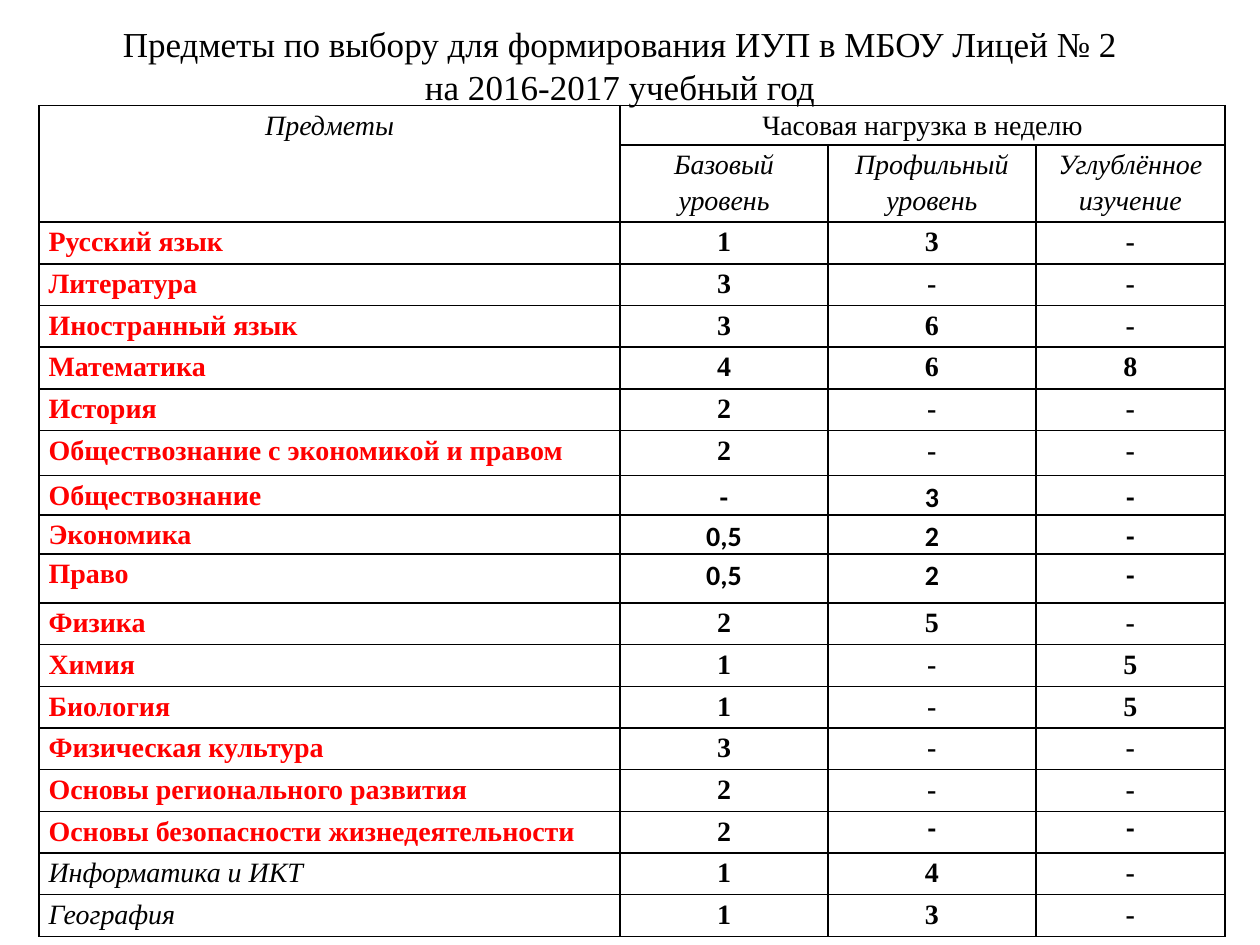
import pptx
import pptx.util
import pptx.dml.color
import pptx.enum.text
import pptx.oxml
import pptx.oxml.ns

Cm = pptx.util.Cm
Pt = pptx.util.Pt
ALIGN = pptx.enum.text.PP_ALIGN
ANCHOR = pptx.enum.text.MSO_ANCHOR
BLACK = pptx.dml.color.RGBColor(0x00, 0x00, 0x00)
RED = pptx.dml.color.RGBColor(0xFF, 0x00, 0x00)
SERIF = "Times New Roman"
SANS = "Calibri"

TITLE = ["Предметы по выбору для формирования ИУП в МБОУ Лицей № 2",
         "на 2016-2017 учебный год"]
LEVELS = ["Базовый уровень", "Профильный уровень", "Углублённое изучение"]
HOURS = [
    ("Русский язык", "1", "3", "-"),
    ("Литература", "3", "-", "-"),
    ("Иностранный язык", "3", "6", "-"),
    ("Математика", "4", "6", "8"),
    ("История", "2", "-", "-"),
    ("Обществознание с экономикой и правом", "2", "-", "-"),
    ("Обществознание", "-", "3", "-"),
    ("Экономика", "0,5", "2", "-"),
    ("Право", "0,5", "2", "-"),
    ("Физика", "2", "5", "-"),
    ("Химия", "1", "-", "5"),
    ("Биология", "1", "-", "5"),
    ("Физическая культура", "3", "-", "-"),
    ("Основы регионального развития", "2", "-", "-"),
    ("Основы безопасности жизнедеятельности", "2", "-", "-"),
    ("Информатика и ИКТ", "1", "4", "-"),
    ("География", "1", "3", "-"),
]
SOCIAL = ("Обществознание", "Экономика", "Право")
SAFETY = "Основы безопасности жизнедеятельности"
CHOICE = ("Информатика и ИКТ", "География")
WIDTHS = [11.71, 4.19, 4.19, 3.81]
HEAD = [0.79, 1.42]
TALL = {"Обществознание с экономикой и правом": 0.91, "Обществознание": 0.79,
        "Экономика": 0.79, "Право": 0.99}


def add_run(para, text, size, face=SERIF, color=BLACK, bold=False, slant=False):
    """Add one styled run to a paragraph."""
    run = para.add_run()
    run.text = text
    font = run.font
    font.size, font.name = Pt(size), face
    font.bold, font.italic = bold, slant
    font.color.rgb = color


def add_title(slide):
    """Place and fill the title."""
    title = slide.shapes.title
    title.left, title.top = Cm(0.79), Cm(0.33)
    title.width, title.height = Cm(23.42), Cm(1.96)
    frame = title.text_frame
    frame.word_wrap = True
    frame.auto_size = pptx.enum.text.MSO_AUTO_SIZE.SHAPE_TO_FIT_TEXT
    frame.vertical_anchor = ANCHOR.MIDDLE
    for index, line in enumerate(TITLE):
        para = frame.add_paragraph() if index else frame.paragraphs[0]
        para.alignment = ALIGN.CENTER
        add_run(para, line, 20)


def frame_cell(cell):
    """Clear the fill, set the margins and draw four black borders."""
    cell.fill.background()
    cell.margin_left = cell.margin_right = Cm(0.19)
    cell.margin_top = cell.margin_bottom = 0
    cell.vertical_anchor = ANCHOR.TOP
    props = cell._tc.get_or_add_tcPr()
    for index, side in enumerate("LRTB"):
        props.insert(index, pptx.oxml.parse_xml(
            f'<a:ln{side} {pptx.oxml.ns.nsdecls("a")} w="12700"><a:solidFill>'
            f'<a:srgbClr val="{BLACK}"/></a:solidFill></a:ln{side}>'))


def fill_cell(cell, text, align=ALIGN.CENTER, space=1.15, **style):
    """Write one line of text into a cell."""
    para = cell.text_frame.paragraphs[0]
    para.alignment = align
    para.line_spacing = space
    add_run(para, text, 16, **style)


def fill_head(table):
    """Merge and fill the two heading rows."""
    table.cell(0, 0).merge(table.cell(1, 0))
    table.cell(0, 1).merge(table.cell(0, 3))
    fill_cell(table.cell(0, 0), "Предметы", slant=True)
    fill_cell(table.cell(0, 1), "Часовая нагрузка в неделю")
    for col, level in enumerate(LEVELS, 1):
        fill_cell(table.cell(1, col), level, slant=True)


def fill_row(table, row, name, hours):
    """Fill the row of one subject."""
    choice = name in CHOICE
    fill_cell(table.cell(row, 0), name, ALIGN.LEFT,
              color=BLACK if choice else RED, bold=not choice, slant=choice)
    for col, value in enumerate(hours, 1):
        tight = name == SAFETY and col > 1
        fill_cell(table.cell(row, col), value, space=1.0 if tight else 1.15,
                  face=SANS if tight or name in SOCIAL else SERIF, bold=True)


def add_hours(slide):
    """Add the table of weekly hours."""
    highs = HEAD + [TALL.get(row[0], 0.84) for row in HOURS]
    table = slide.shapes.add_table(
        len(highs), len(WIDTHS), Cm(0.79), Cm(2.13),
        Cm(sum(WIDTHS)), Cm(sum(highs))).table
    table.first_row = table.horz_banding = False
    for col, width in zip(table.columns, WIDTHS):
        col.width = Cm(width)
    for row, high in zip(table.rows, highs):
        row.height = Cm(high)
    for cell in table.iter_cells():
        frame_cell(cell)
    fill_head(table)
    for row, (name, *hours) in enumerate(HOURS, len(HEAD)):
        fill_row(table, row, name, hours)


def main():
    """Build and save the slide."""
    deck = pptx.Presentation()
    deck.slide_width, deck.slide_height = Cm(25.4), Cm(19.05)
    slide = deck.slides.add_slide(deck.slide_layouts[5])
    add_title(slide)
    add_hours(slide)
    deck.save("out.pptx")


if __name__ == "__main__":
    main()
